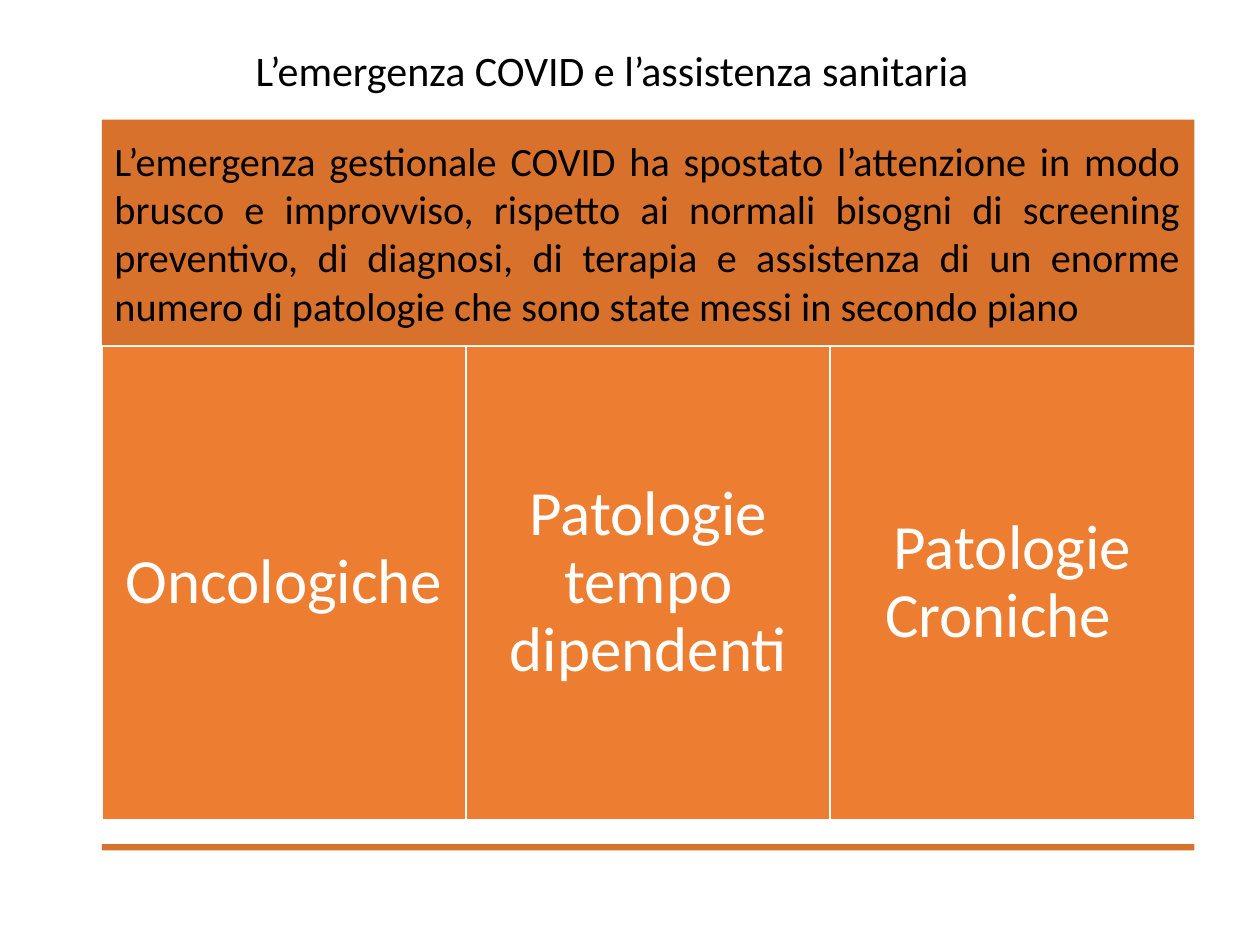
from pptx import Presentation
from pptx.dml.color import RGBColor
from pptx.enum.shapes import MSO_SHAPE
from pptx.enum.text import MSO_ANCHOR, MSO_AUTO_SIZE, PP_ALIGN
from pptx.util import Inches, Pt

BLACK = RGBColor(0x00, 0x00, 0x00)
WHITE = RGBColor(0xFF, 0xFF, 0xFF)
ORANGE = RGBColor(0xED, 0x7D, 0x31)
DARK_ORANGE = RGBColor(0xD7, 0x71, 0x2C)

LEFT = 0.81
WIDTH = 8.67
COLUMNS = ["Oncologiche ", "Patologie tempo dipendenti", "Patologie Croniche  "]


class SlideBuilder:
    font_name = "Calibri"

    def __init__(self, presentation):
        self.slide = presentation.slides.add_slide(presentation.slide_layouts[5])

    def fill_text(self, shape, text, size, color, frame_format, paragraph_format):
        frame = shape.text_frame
        for name, value in frame_format.items():
            setattr(frame, name, value)
        paragraph = frame.paragraphs[0]
        for name, value in paragraph_format.items():
            setattr(paragraph, name, value)
        run = paragraph.add_run()
        run.text = text
        for name, value in {"name": self.font_name, "size": Pt(size)}.items():
            setattr(run.font, name, value)
        run.font.color.rgb = color

    def title(self, text, left, top, width, height):
        shape = self.slide.shapes.title
        position = {"left": left, "top": top, "width": width, "height": height}
        for name, value in position.items():
            setattr(shape, name, Inches(value))
        frame_format = {
            "word_wrap": False,
            "auto_size": MSO_AUTO_SIZE.NONE,
            "vertical_anchor": MSO_ANCHOR.TOP,
        }
        self.fill_text(shape, text, 24, BLACK, frame_format, {"alignment": PP_ALIGN.CENTER})

    def rectangle(self, left, top, width, height, fill, line=None):
        shape = self.slide.shapes.add_shape(
            MSO_SHAPE.RECTANGLE, Inches(left), Inches(top), Inches(width), Inches(height)
        )
        shape.shadow.inherit = False
        shape.fill.solid()
        shape.fill.fore_color.rgb = fill
        if line is None:
            shape.line.fill.background()
        else:
            shape.line.color.rgb = line
            shape.line.width = Pt(1)
        return shape

    def panel(self, shape, text, size, color, margin, paragraph_format):
        frame_format = {"word_wrap": True, "vertical_anchor": MSO_ANCHOR.MIDDLE}
        for side in ("left", "top", "right", "bottom"):
            frame_format[f"margin_{side}"] = Inches(margin)
        self.fill_text(shape, text, size, color, frame_format, paragraph_format)


def main():
    presentation = Presentation()
    presentation.slide_width = Inches(10)
    presentation.slide_height = Inches(7.5)
    builder = SlideBuilder(presentation)

    builder.title("L’emergenza COVID e l’assistenza sanitaria ", 0.73, 0.3, 8.33, 0.64)

    header = builder.rectangle(LEFT, 0.95, WIDTH, 1.79, DARK_ORANGE)
    builder.panel(
        header,
        "L’emergenza gestionale COVID ha spostato l’attenzione in modo brusco e "
        "improvviso, rispetto ai normali bisogni di screening preventivo, di diagnosi, "
        "di terapia e assistenza di un enorme numero di patologie che sono state messi "
        "in secondo piano",
        23, BLACK, 0.1, {"alignment": PP_ALIGN.JUSTIFY},
    )

    column_width = WIDTH / len(COLUMNS)
    column_format = {"alignment": PP_ALIGN.CENTER, "line_spacing": 0.9}
    for index, text in enumerate(COLUMNS):
        column = builder.rectangle(
            LEFT + index * column_width, 2.75, column_width, 3.76, ORANGE, WHITE
        )
        builder.panel(column, text, 36, WHITE, 0.15, column_format)

    builder.rectangle(LEFT, 6.7, WIDTH, 0.05, DARK_ORANGE)
    presentation.save("out.pptx")


if __name__ == "__main__":
    main()
